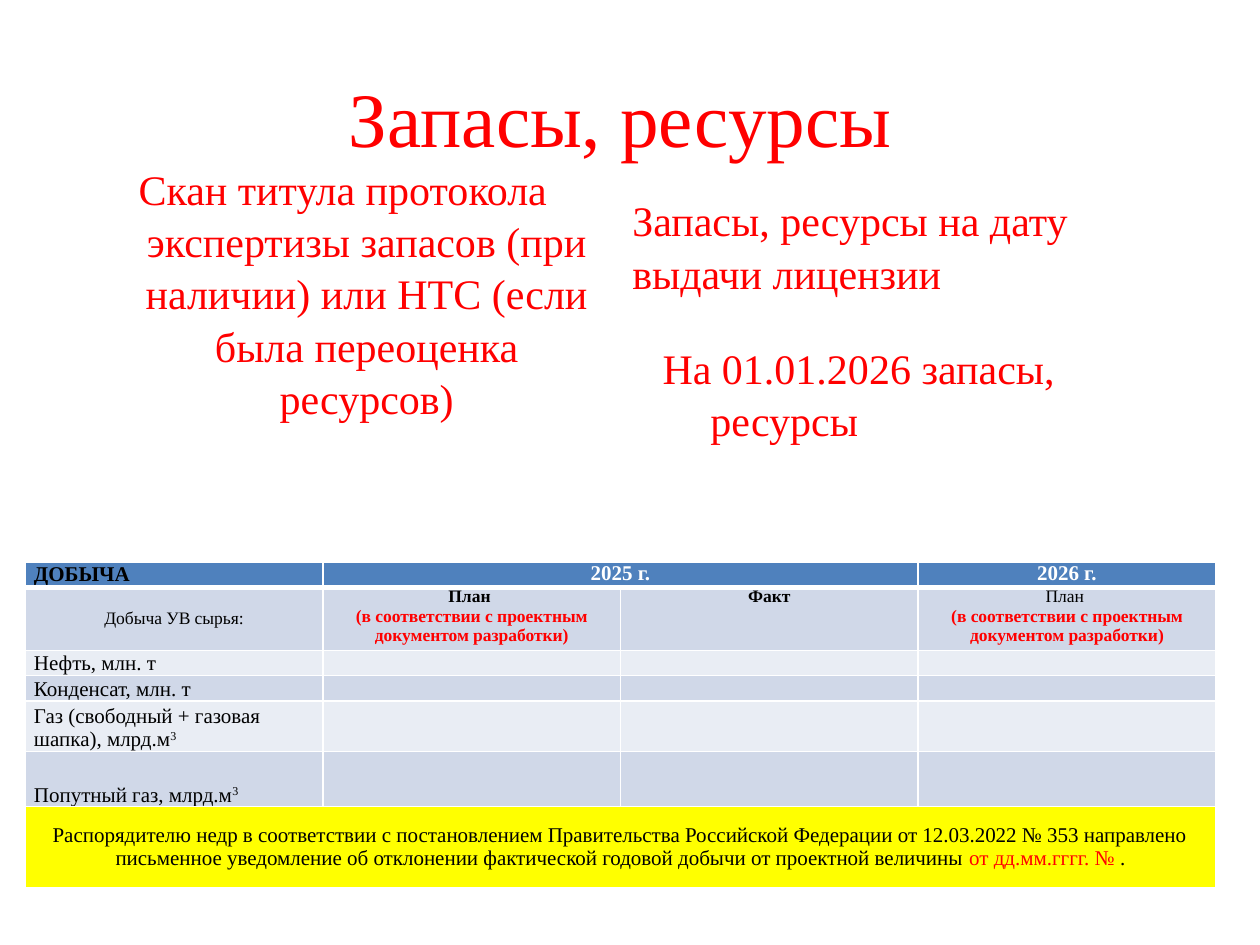
from lxml.etree import SubElement
from pptx import Presentation
from pptx.dml.color import RGBColor
from pptx.enum.text import MSO_ANCHOR, PP_ALIGN
from pptx.oxml.ns import qn
from pptx.util import Inches, Pt

COLORS = {
    "red": "FF0000", "black": "000000", "white": "FFFFFF", "header": "4F81BD",
    "dark": "D0D8E8", "light": "E9EDF4", "notice": "FFFF00",
}
FONT = "Times New Roman"
WIDTH, HEIGHT = 10, 7.5
CENTER, LEFT = PP_ALIGN.CENTER, PP_ALIGN.LEFT
TOP, MIDDLE, BOTTOM = MSO_ANCHOR.TOP, MSO_ANCHOR.MIDDLE, MSO_ANCHOR.BOTTOM

BODY = {"size": 24, "color": "red", "before": 4.8, "spacing": 1.04}
TEXTS = [
    ("Запасы, ресурсы ", (0.5, 0.3, 9, 1.25),
     {"size": 44, "color": "red", "align": CENTER, "anchor": MIDDLE}),
    ("Скан титула протокола экспертизы запасов (при наличии) или НТС "
     "(если была переоценка ресурсов)", (0.51, 1.23, 4.42, 4.32),
     {**BODY, "align": CENTER, "hanging": 0.38}),
    ("Запасы, ресурсы на дату выдачи лицензии", (4.92, 1.39, 4.58, 1.02),
     {**BODY, "anchor": BOTTOM}),
    ("На 01.01.2026 запасы, ресурсы", (5.16, 2.65, 4.42, 1.34),
     {**BODY, "hanging": 0.38}),
]

TABLE_LEFT, TABLE_TOP, TABLE_WIDTH, COLUMNS = 0.2, 4.46, 9.45, 4
ROWS = [
    (0.19, "header"), (0.49, "dark"), (0.19, "light"), (0.19, "dark"),
    (0.37, "light"), (0.44, "dark"), (0.64, "notice"),
]
BASIS = [("(в соответствии с проектным документом разработки)",
          {"color": "red", "bold": True})]
HEADING = {"size": 12, "bold": True, "color": "white", "align": CENTER}
SUBHEADING = {"size": 10, "align": CENTER}
LABEL = {"size": 12, "anchor": BOTTOM}
CUBED = ("3", {"baseline": 30000})
CELLS = {
    (0, 0): ("ДОБЫЧА", {"size": 12, "bold": True, "anchor": MIDDLE}),
    (0, 1): ("2025 г.", HEADING),
    (0, 3): ("2026 г.", HEADING),
    (1, 0): ("Добыча УВ сырья:", {**SUBHEADING, "anchor": MIDDLE}),
    (1, 1): ([[("План ", {"bold": True})], BASIS], SUBHEADING),
    (1, 2): ("Факт", {**SUBHEADING, "bold": True}),
    (1, 3): ([[("План ", {})], BASIS], SUBHEADING),
    (2, 0): ("Нефть, млн. т", LABEL),
    (3, 0): ("Конденсат, млн. т", LABEL),
    (4, 0): ([[("Газ (свободный + газовая шапка), млрд.м", {}), CUBED]], LABEL),
    (5, 0): ([[("Попутный газ, млрд.м", {}), CUBED]], LABEL),
    (6, 0): ([
        [("Распорядителю недр в соответствии с постановлением Правительства "
          "Российской Федерации от 12.03.2022 № 353 направлено", {})],
        [("письменное уведомление об отклонении фактической годовой добычи "
          "от проектной величины ", {}),
         ("от дд.мм.гггг. № ", {"color": "red"}), (".", {})],
    ], {"size": 12, "align": CENTER, "anchor": MIDDLE}),
}
MERGES = [((0, 1), (0, 2)), ((6, 0), (6, 3))]


def write(frame, text, size=12, color="black", bold=False, align=LEFT,
          before=0, spacing=None, hanging=0):
    paragraphs = [[(text, {})]] if isinstance(text, str) else text
    for index, runs in enumerate(paragraphs):
        paragraph = frame.add_paragraph() if index else frame.paragraphs[0]
        paragraph.alignment = align
        paragraph.space_before = Pt(before)
        paragraph.line_spacing = spacing
        if hanging:
            properties = paragraph._p.get_or_add_pPr()
            properties.set("marL", str(Inches(hanging)))
            properties.set("indent", str(-Inches(hanging)))
        for words, changes in runs:
            run = paragraph.add_run()
            run.text = words
            run.font.name = FONT
            run.font.size = Pt(size)
            run.font.bold = changes.get("bold", bold)
            run.font.color.rgb = RGBColor.from_string(
                COLORS[changes.get("color", color)])
            if "baseline" in changes:
                run.font._element.set("baseline", str(changes["baseline"]))


def add_borders(cell, bottom):
    properties = cell._tc.get_or_add_tcPr()
    for position, (side, width) in enumerate(
            [("L", 1), ("R", 1), ("T", 1), ("B", bottom)]):
        line = SubElement(properties, qn(f"a:ln{side}"), w=str(Pt(width)))
        fill = SubElement(line, qn("a:solidFill"))
        SubElement(fill, qn("a:srgbClr"), val=COLORS["white"])
        properties.insert(position, line)


def add_text(slide, text, box, anchor=TOP, **style):
    frame = slide.shapes.add_textbox(*map(Inches, box)).text_frame
    frame.word_wrap = True
    frame.vertical_anchor = anchor
    write(frame, text, **style)


def add_production_table(slide):
    table_height = sum(height for height, _ in ROWS)
    table = slide.shapes.add_table(
        len(ROWS), COLUMNS, Inches(TABLE_LEFT), Inches(TABLE_TOP),
        Inches(TABLE_WIDTH), Inches(table_height)).table
    for row_index, (height, color) in enumerate(ROWS):
        table.rows[row_index].height = Inches(height)
        for column_index in range(COLUMNS):
            cell = table.cell(row_index, column_index)
            cell.margin_left = cell.margin_right = Inches(0.07)
            cell.margin_top = cell.margin_bottom = 0
            cell.fill.solid()
            cell.fill.fore_color.rgb = RGBColor.from_string(COLORS[color])
            add_borders(cell, 3 if row_index == 0 else 1)
            if (row_index, column_index) in CELLS:
                text, style = CELLS[row_index, column_index]
                style = dict(style)
                cell.vertical_anchor = style.pop("anchor", TOP)
                write(cell.text_frame, text, **style)
            else:
                SubElement(cell.text_frame.paragraphs[0]._p,
                           qn("a:endParaRPr"), sz="1000")
    for first, last in MERGES:
        table.cell(*first).merge(table.cell(*last))


def main():
    presentation = Presentation()
    presentation.slide_width = Inches(WIDTH)
    presentation.slide_height = Inches(HEIGHT)
    slide = presentation.slides.add_slide(presentation.slide_layouts[6])
    for text, box, style in TEXTS:
        add_text(slide, text, box, **style)
    add_production_table(slide)
    presentation.save("out.pptx")


if __name__ == "__main__":
    main()
